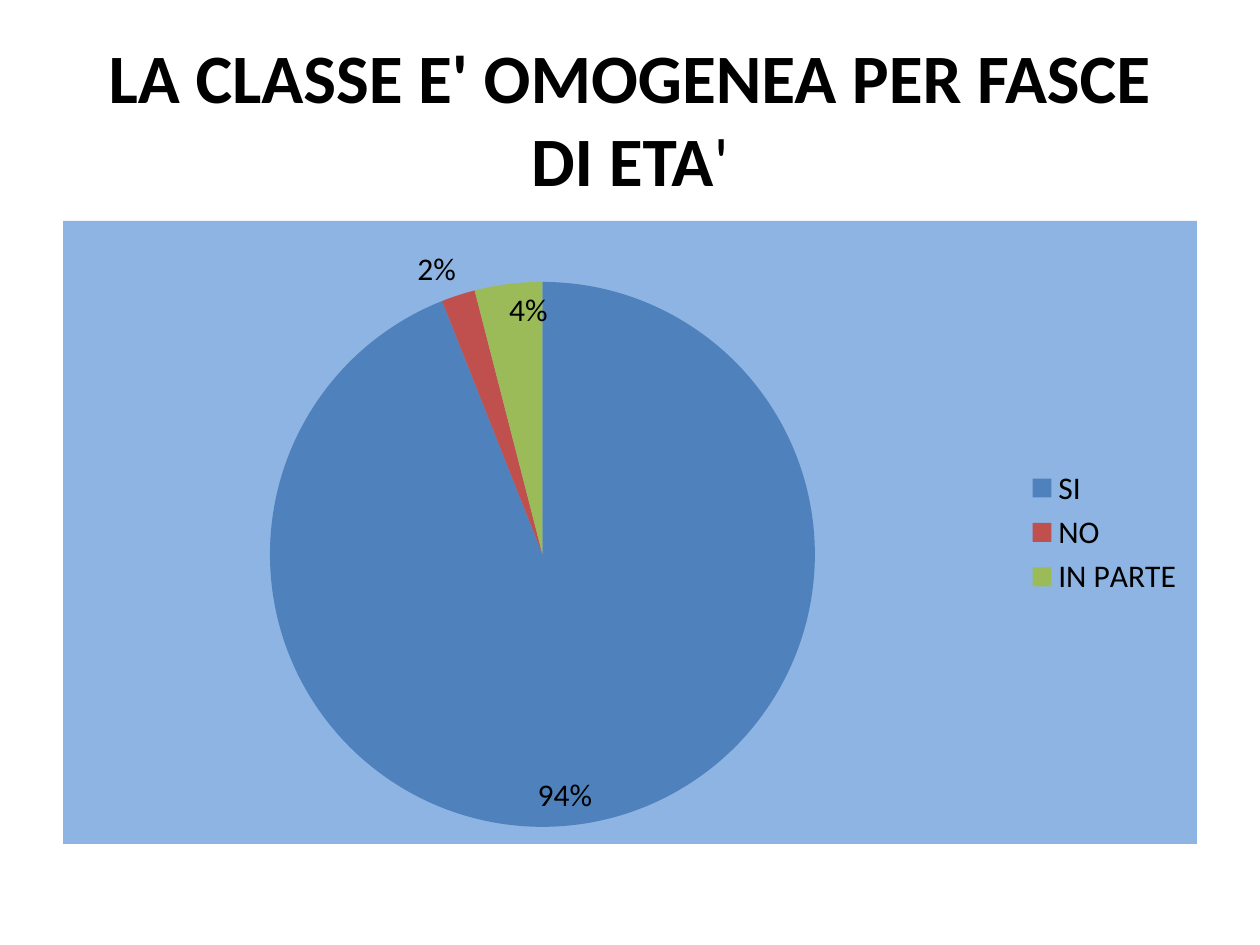
from dataclasses import dataclass

from lxml.etree import SubElement
from pptx import Presentation
from pptx.chart.data import CategoryChartData
from pptx.dml.color import RGBColor
from pptx.enum.chart import XL_CHART_TYPE as ChartType
from pptx.enum.chart import XL_LABEL_POSITION as LabelPos
from pptx.enum.chart import XL_LEGEND_POSITION as LegendPos
from pptx.enum.text import MSO_ANCHOR as Anchor
from pptx.enum.text import PP_ALIGN as Align
from pptx.oxml import parse_xml
from pptx.oxml.ns import nsdecls, qn
from pptx.util import Emu, Pt

PX_PER_INCH = 126


@dataclass(frozen=True)
class Theme:
    font: str = "Calibri"
    text: str = "000000"
    panel: str = "8EB4E3"
    title_size: float = 39.6
    chart_size: int = 18


@dataclass(frozen=True)
class Box:
    x: int
    y: int
    w: int
    h: int

    def emu(self) -> list[Emu]:
        return [px(v) for v in (self.x, self.y, self.w, self.h)]


@dataclass(frozen=True)
class Run:
    text: str
    bold: bool


@dataclass(frozen=True)
class Slice:
    name: str
    value: float
    color: str
    label: LabelPos


THEME = Theme()
TITLE_BOX = Box(63, 38, 1134, 158)
CHART_BOX = Box(63, 221, 1134, 623)
PIE_BOX = Box(270, 282, 545, 545)
TITLE = [Run("LA CLASSE E' OMOGENEA PER FASCE DI ETA", True), Run("'", False)]
SLICES = [
    Slice("SI", 0.94, "4F81BD", LabelPos.INSIDE_END),
    Slice("NO", 0.02, "C0504D", LabelPos.OUTSIDE_END),
    Slice("IN PARTE", 0.04, "9BBB59", LabelPos.INSIDE_END),
]


def px(n: int) -> Emu:
    return Emu(round(n * 914400 / PX_PER_INCH))


def style_font(font, size: float, bold: bool = False) -> None:
    font.name = THEME.font
    font.size = Pt(size)
    font.bold = bold
    font.color.rgb = RGBColor.from_string(THEME.text)


def add_title(s, box: Box, runs: list[Run]) -> None:
    tf = s.shapes.add_textbox(*box.emu()).text_frame
    tf.word_wrap = True
    tf.vertical_anchor = Anchor.MIDDLE
    p = tf.paragraphs[0]
    p.alignment = Align.CENTER
    for run in runs:
        r = p.add_run()
        r.text = run.text
        style_font(r.font, THEME.title_size, run.bold)


def fill_chart(chart, color: str) -> None:
    chart_el = chart._chartSpace.find(qn("c:chart"))
    chart_el.addnext(parse_xml(
        f'<c:spPr {nsdecls("c", "a")}><a:solidFill><a:srgbClr val="{color}"/>'
        "</a:solidFill><a:ln><a:noFill/></a:ln></c:spPr>"))


def place_plot(chart, outer: Box, inner: Box) -> None:
    """Fix the plot area at inner, in fractions of outer."""
    area = chart._chartSpace.find(qn("c:chart")).find(qn("c:plotArea"))
    for old in area.findall(qn("c:layout")):
        area.remove(old)
    layout = parse_xml(f'<c:layout {nsdecls("c")}><c:manualLayout/></c:layout>')
    settings = {
        "layoutTarget": "inner", "xMode": "edge", "yMode": "edge",
        "x": round((inner.x - outer.x) / outer.w, 4),
        "y": round((inner.y - outer.y) / outer.h, 4),
        "w": round(inner.w / outer.w, 4),
        "h": round(inner.h / outer.h, 4),
    }
    for tag, val in settings.items():
        SubElement(layout[0], qn(f"c:{tag}")).set("val", str(val))
    area.insert(0, layout)


def add_pie(s, box: Box, pie: Box, slices: list[Slice]) -> None:
    data = CategoryChartData(number_format="0%")
    data.categories = [sl.name for sl in slices]
    data.add_series("Series 1", [sl.value for sl in slices])
    chart = s.shapes.add_chart(ChartType.PIE, *box.emu(), data).chart
    chart.has_title = False
    style_font(chart.font, THEME.chart_size)
    fill_chart(chart, THEME.panel)
    place_plot(chart, box, pie)

    # Legend
    chart.has_legend = True
    chart.legend.position = LegendPos.RIGHT
    chart.legend.include_in_layout = False

    # Slices and their labels
    chart.plots[0].vary_by_categories = True
    series = chart.plots[0].series[0]
    labels = series.data_labels
    labels.show_value = True
    labels.number_format = "0%"
    labels.number_format_is_linked = False
    for i, sl in enumerate(slices):
        point = series.points[i]
        point.format.fill.solid()
        point.format.fill.fore_color.rgb = RGBColor.from_string(sl.color)
        point.data_label.position = sl.label
        style_font(point.data_label.font, THEME.chart_size)


def main() -> None:
    prs = Presentation()
    prs.slide_width, prs.slide_height = px(1260), px(945)
    s = prs.slides.add_slide(prs.slide_layouts[6])
    add_title(s, TITLE_BOX, TITLE)
    add_pie(s, CHART_BOX, PIE_BOX, SLICES)
    prs.save("out.pptx")


if __name__ == "__main__":
    main()
